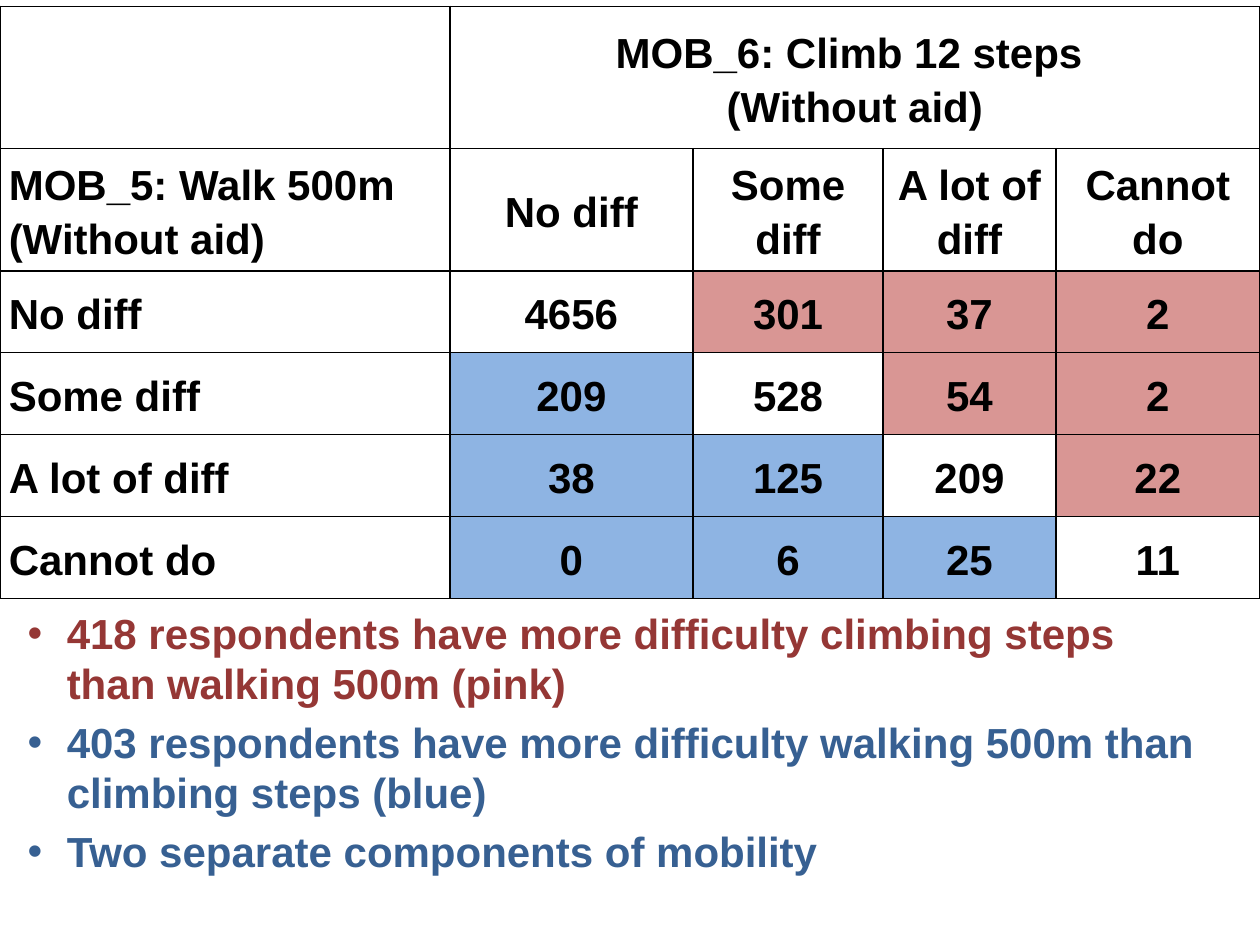
from lxml import etree
from pptx import Presentation
from pptx.dml.color import RGBColor
from pptx.enum.text import MSO_ANCHOR, PP_ALIGN
from pptx.oxml.ns import qn
from pptx.util import Inches, Pt

BLACK = RGBColor(0x00, 0x00, 0x00)
PINK = RGBColor(0xD9, 0x96, 0x94)
BLUE = RGBColor(0x8E, 0xB4, 0xE3)
DARK_RED = RGBColor(0x95, 0x37, 0x35)
DARK_BLUE = RGBColor(0x37, 0x60, 0x92)

COL_WIDTHS = [3.57, 1.93, 1.51, 1.37, 1.62]
ROW_HEIGHTS = [1.13, 0.97, 0.65, 0.65, 0.65, 0.65]
ROWS = [
    ["", "MOB_6: Climb 12 steps \n(Without aid)", "", "", ""],
    ["MOB_5: Walk 500m (Without aid)", "No diff", "Some diff", "A lot of diff", "Cannot do"],
    ["No diff", "4656", "301", "37", "2"],
    ["Some diff", "209", "528", "54", "2"],
    ["A lot of diff", "38", "125", "209", "22"],
    ["Cannot do", "0", "6", "25", "11"],
]
FINDINGS = [
    ("418 respondents have more difficulty climbing steps than walking 500m (pink)", DARK_RED),
    ("403 respondents have more difficulty walking 500m than climbing steps (blue)", DARK_BLUE),
    ("Two separate components of mobility", DARK_BLUE),
]


def set_font(p, color):
    p.font.name = "Arial"
    p.font.size = Pt(24)
    p.font.bold = True
    p.font.color.rgb = color


def add_borders(cell):
    tcPr = cell._tc.get_or_add_tcPr()
    for side in ("a:lnL", "a:lnR", "a:lnT", "a:lnB"):
        ln = etree.SubElement(tcPr, qn(side), w=str(Pt(1)))
        fill = etree.SubElement(ln, qn("a:solidFill"))
        etree.SubElement(fill, qn("a:srgbClr"), val=str(BLACK))


def fill_cell(cell, row, col):
    first_data_row = 2
    diagonal = row - first_data_row + 1
    if row < first_data_row or col in (0, diagonal):
        cell.fill.background()
    else:
        cell.fill.solid()
        cell.fill.fore_color.rgb = PINK if col > diagonal else BLUE


def add_crosstab(slide, left, top, width, height):
    table = slide.shapes.add_table(
        len(ROWS), len(COL_WIDTHS), left, top, width, height).table
    table.first_row = table.horz_banding = False
    for column, w in zip(table.columns, COL_WIDTHS):
        column.width = Inches(w)
    for row, h in zip(table.rows, ROW_HEIGHTS):
        row.height = Inches(h)
    for r, texts in enumerate(ROWS):
        for c, text in enumerate(texts):
            cell = table.cell(r, c)
            cell.text = text
            cell.vertical_anchor = MSO_ANCHOR.MIDDLE
            cell.margin_left = cell.margin_right = Inches(0.07)
            cell.margin_top = cell.margin_bottom = 0
            for p in cell.text_frame.paragraphs:
                p.alignment = PP_ALIGN.CENTER if c else PP_ALIGN.LEFT
                p.line_spacing = 1.15
                set_font(p, BLACK)
            add_borders(cell)
            fill_cell(cell, r, c)
    table.cell(0, 1).merge(table.cell(0, 4))


def add_findings(slide, left, top, width, height):
    body = slide.placeholders[1]
    body.left, body.top, body.width, body.height = left, top, width, height
    tf = body.text_frame
    tf.text = "\n".join(text for text, _ in FINDINGS)
    for p, (_, color) in zip(tf.paragraphs, FINDINGS):
        set_font(p, color)
        pPr = p._p.get_or_add_pPr()
        pPr.set("marL", str(Inches(0.31)))
        pPr.set("indent", str(-Inches(0.31)))


def main():
    prs = Presentation()
    prs.slide_width, prs.slide_height = Inches(10), Inches(7.5)
    s = prs.slides.add_slide(prs.slide_layouts[1])
    title = s.shapes.title._element
    title.getparent().remove(title)
    add_findings(s, Inches(0.12), Inches(4.77), Inches(9.53), Inches(2.28))
    add_crosstab(s, 0, Inches(0.05), Inches(10), Inches(4.7))
    prs.save("out.pptx")


if __name__ == "__main__":
    main()
